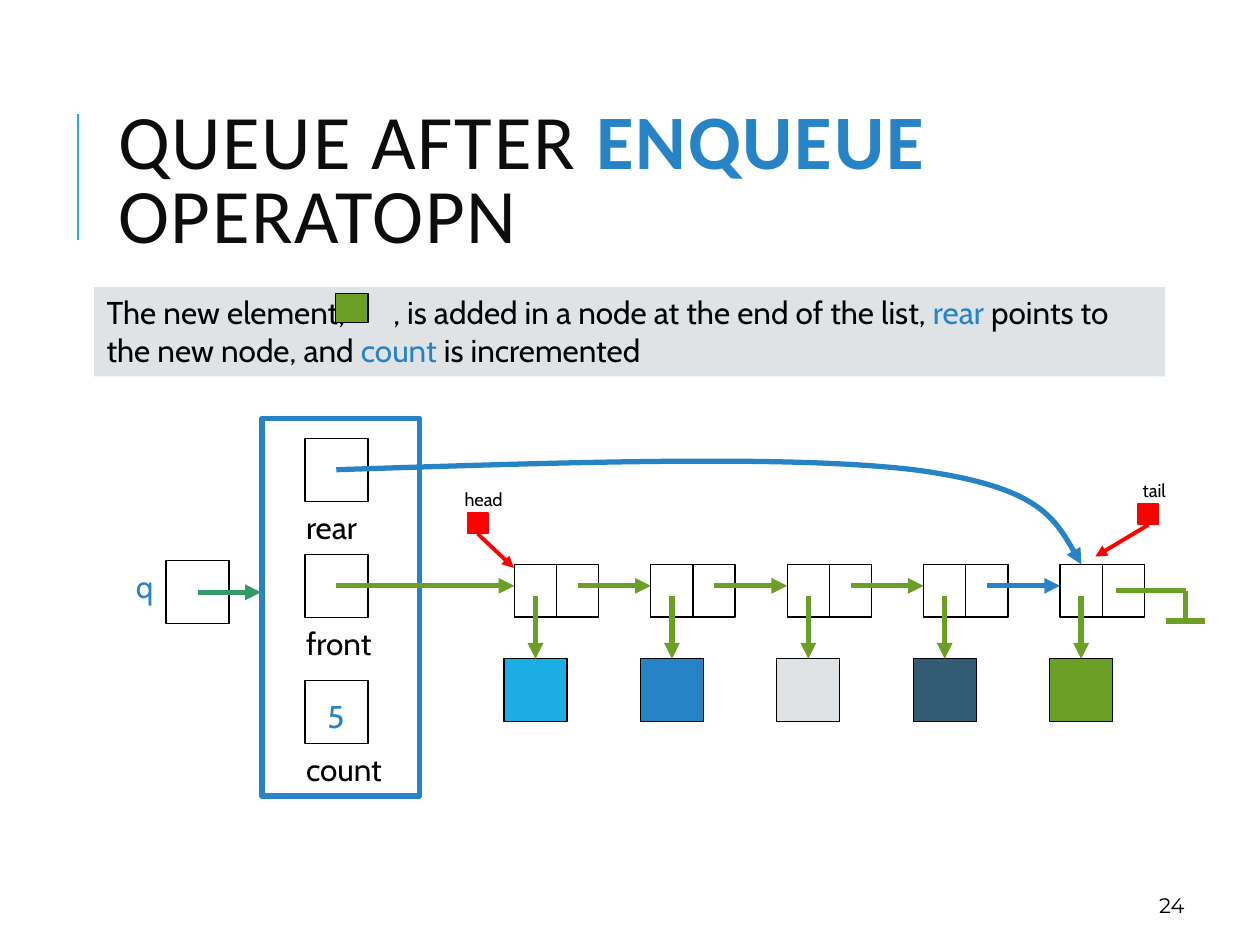
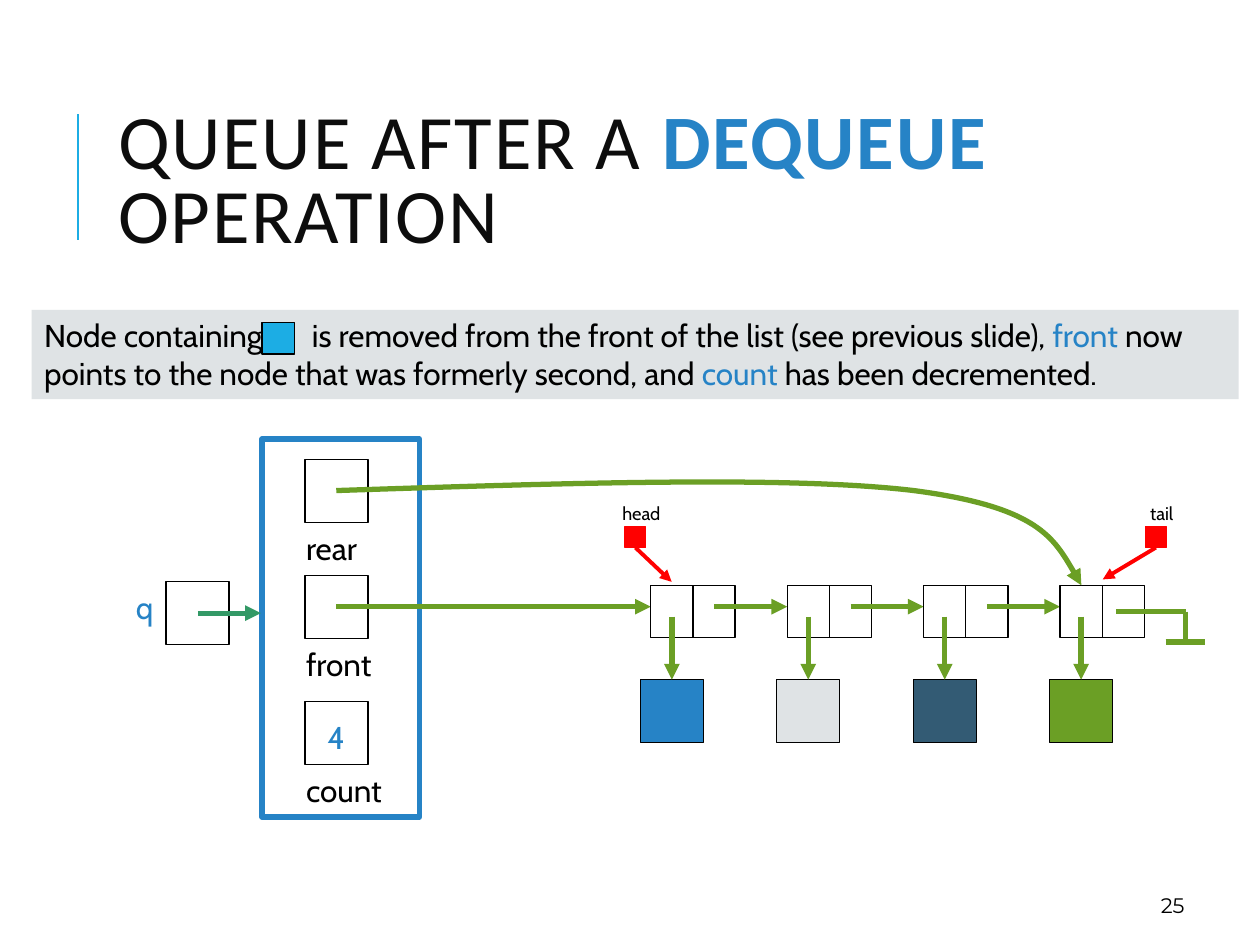
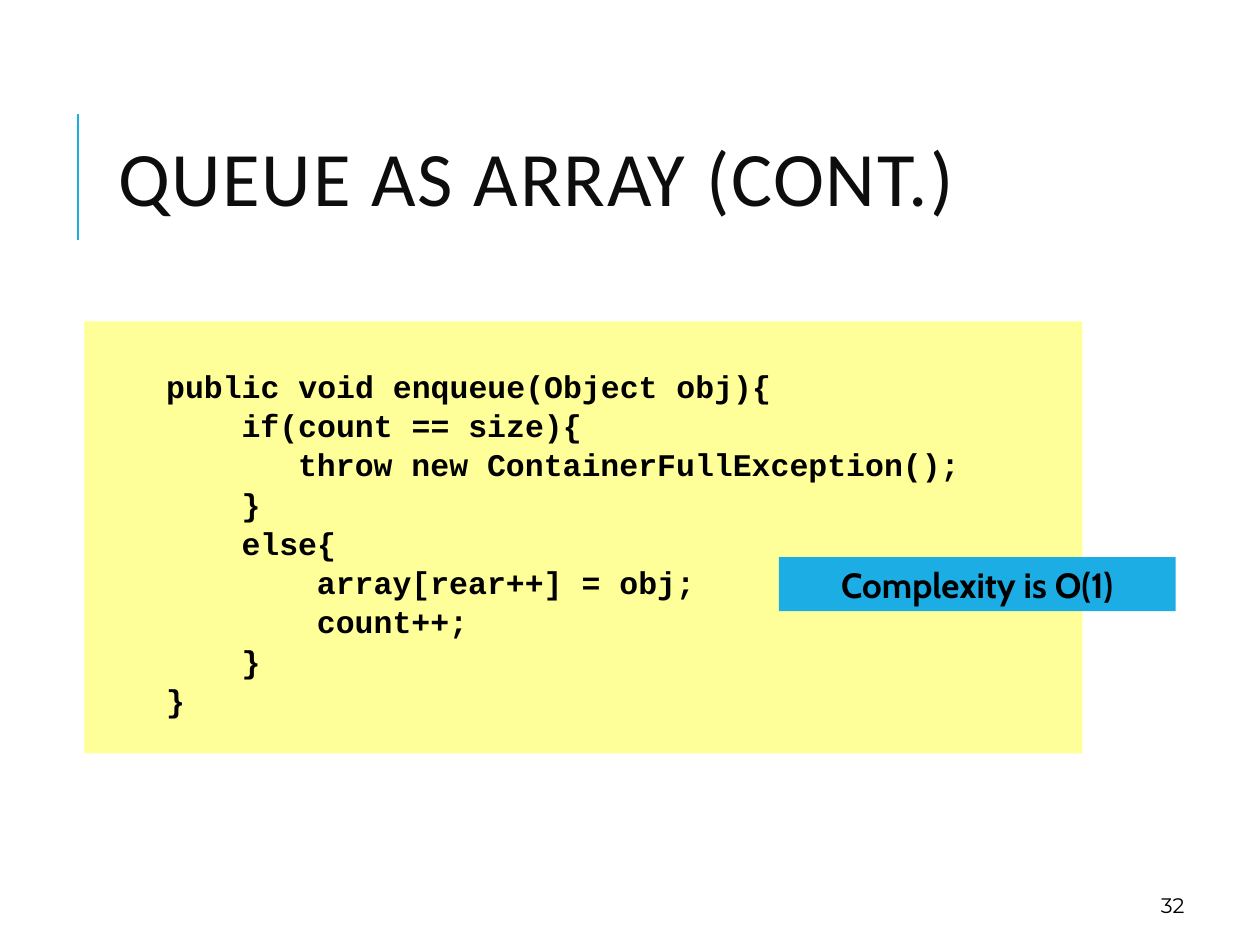
from lxml import etree
from pptx import Presentation
from pptx.dml.color import RGBColor as RGB
from pptx.enum.shapes import MSO_CONNECTOR as CONN, MSO_SHAPE as SHAPE
from pptx.enum.text import MSO_ANCHOR as ANCHOR, PP_ALIGN as ALIGN
from pptx.oxml.ns import qn
from pptx.util import Cm, Pt

C = {"black": "000000", "title": "0D0D0D", "sky": "1CADE4", "blue": "2683C6",
     "grey": "DFE3E5", "slate": "335B74", "green": "6B9F25", "teal": "339966",
     "red": "FF0000", "yellow": "FFFF99"}

prs = Presentation()
prs.slide_width, prs.slide_height = Cm(25.4), Cm(19.05)


def box(s, x, y, w, h, paras=(), fill=None, line=None, width=0.75, font="Cabin",
        size=18, bold=False, color="black", align=ALIGN.LEFT, anchor=ANCHOR.TOP,
        spacing=None, after=0, tracking=None, tab=None, insets=None):
    """Box of paragraphs; each is (indent, runs), each run is (text, own format)."""
    at = Cm(x), Cm(y), Cm(w), Cm(h)
    if fill or line:
        sp = s.shapes.add_shape(SHAPE.RECTANGLE, *at)
        sp.shadow.inherit = False
    else:
        sp = s.shapes.add_textbox(*at)
    if fill:
        sp.fill.solid()
        sp.fill.fore_color.rgb = RGB.from_string(C[fill])
    else:
        sp.fill.background()
    if line:
        sp.line.color.rgb = RGB.from_string(C[line])
        sp.line.width = Pt(width)
    else:
        sp.line.fill.background()
    tf = sp.text_frame
    tf.word_wrap, tf.vertical_anchor = True, anchor
    if insets:
        tf.margin_left, tf.margin_top, tf.margin_right, tf.margin_bottom = map(Cm, insets)
    if isinstance(paras, str):
        paras = [(0, [(paras, {})])]
    for i, (indent, runs) in enumerate(paras):
        p = tf.paragraphs[0] if i == 0 else tf.add_paragraph()
        p.alignment, p.line_spacing, p.space_after = align, spacing, Pt(after)
        pPr = p._p.get_or_add_pPr()
        if indent:
            pPr.set("marL", str(Cm(indent)))
        if tab:
            stops = etree.SubElement(pPr, qn("a:tabLst"))
            etree.SubElement(stops, qn("a:tab"), pos=str(Cm(tab)), algn="l")
        for text, own in runs:
            r = p.add_run()
            r.text = text
            r.font.name, r.font.size = font, Pt(size)
            r.font.bold = own.get("bold", bold)
            r.font.color.rgb = RGB.from_string(C[own.get("color", color)])
            if tracking:
                r._r.get_or_add_rPr().set("spc", str(tracking))


def link(s, *points, color="green", width=3, arrow=True):
    """Straight line through two points, or cubic curves through 3n + 1 points."""
    pts = [(Cm(x), Cm(y)) for x, y in points]
    if len(pts) == 2:
        sp = s.shapes.add_connector(CONN.STRAIGHT, *pts[0], *pts[1])
    else:
        fb = s.shapes.build_freeform(*pts[0])
        fb.add_line_segments(pts[1:], close=False)
        sp = fb.convert_to_shape()
        sp.fill.background()
        segs = list(sp.element.iter(qn("a:lnTo")))
        for i in range(0, len(segs), 3):
            cubic = etree.SubElement(segs[i].getparent(), qn("a:cubicBezTo"))
            for seg in segs[i:i + 3]:
                cubic.append(seg[0])
                seg.getparent().remove(seg)
    sp.line.color.rgb = RGB.from_string(C[color])
    sp.line.width = Pt(width)
    if arrow:
        etree.SubElement(sp.line._get_or_add_ln(), qn("a:tailEnd"), type="triangle")
    etree.SubElement(sp.element.spPr, qn("a:effectLst"))


# Titles, accent bar and page number on every slide
KEY, STRONG = {"color": "blue"}, {"color": "blue", "bold": True}
titles = [
    ([("QUEUE AFTER ", {}), ("ENQUEUE ", STRONG), ("OPERATOPN", {})], "24"),
    ([("QUEUE AFTER A ", {}), ("DEQUEUE", STRONG), (" OPERATION", {})], "25"),
    ([("QUEUE AS ARRAY (CONT.)", {})], "32"),
]
slides = []
for runs, number in titles:
    s = prs.slides.add_slide(prs.slide_layouts[6])
    link(s, (1.57, 4.83), (1.57, 2.29), color="sky", width=1.5, arrow=False)
    box(s, 2.13, 1.63, 20.24, 4.17, [(0, runs)], font="Calibri", size=44,
        color="title", anchor=ANCHOR.MIDDLE, spacing=0.8, tracking=100)
    box(s, 18.21, 17.35, 5.92, 1.27, number, font="Montserrat", size=12,
        align=ALIGN.RIGHT, anchor=ANCHOR.BOTTOM)
    slides.append(s)

# Linked queue before and after: what differs between the two diagrams
elements = ["sky", "blue", "grey", "slate", "green"]
diagrams = [
    dict(dy=0, first=0, new="blue", band=(1.9, 5.79, 21.59, 1.8), tab=5.78,
         chip=(6.76, 5.92, 0.66, 0.58), chip_fill="green",
         head=(9.42, 10.34), tail=(22.94, 10.16),
         note=[("The new element,\t, is added in a node at the end of the list, ", {}),
               ("rear", KEY), (" points to the new node, and ", {}),
               ("count", KEY), (" is incremented", {})]),
    dict(dy=0.42, first=1, new="green", band=(0.64, 6.25, 24.33, 1.8), tab=5.4,
         chip=(5.28, 6.5, 0.66, 0.64), chip_fill="sky",
         head=(12.6, 10.62), tail=(23.09, 10.62),
         note=[("Node containing\tis removed from the front of the list "
                "(see previous slide), ", {}),
               ("front", KEY), (" now points to the node that was formerly second, and ", {}),
               ("count", KEY), (" has been decremented.", {})]),
]
SIDE, CELL_W, CELL_H = 1.27, 0.85, 1.06
NODE_X, PITCH = 10.37, 2.75
curve = [(6.78, 9.47), (11.35, 9.32), (15.9, 9.17), (18.42, 9.47),
         (20.93, 9.8), (21.36, 10.59), (21.8, 11.38)]
ground = [((22.5, 11.91), (23.9, 11.91)), ((23.9, 11.91), (23.9, 12.52)),
          ((23.5, 12.52), (24.3, 12.52))]

for s, d in zip(slides, diagrams):
    dy, first, last = d["dy"], d["first"], len(elements) - 1

    # Explanation with the element it speaks of
    box(s, *d["band"], [(0, d["note"])], fill="grey", tab=d["tab"])
    box(s, *d["chip"], fill=d["chip_fill"], line="black")

    # Queue record and its reference
    box(s, 5.28, 8.43 + dy, 3.18, 7.62, line="blue", width=3)
    for name, y in [("rear", 8.84), ("front", 11.18), ("count", 13.72)]:
        box(s, 6.15, y + dy, SIDE, SIDE, line="black")
        box(s, 5.92, y + SIDE + dy, 2.34, 1.09, name)
    box(s, 6.35, 13.92 + dy, 1, 1.09, str(len(elements) - first), color="blue")
    box(s, 2.49, 11.3 + dy, SIDE, 1.09, "q", color="blue")
    box(s, 3.35, 11.3 + dy, SIDE, SIDE, line="black")
    link(s, (3.99, 11.94 + dy), (5.26, 11.94 + dy), color="teal")

    # Nodes, their elements and the links between them
    next_y = 11.81 + dy
    link(s, (6.78, next_y), (NODE_X + first * PITCH, next_y))
    for i in range(first, last + 1):
        x = NODE_X + i * PITCH
        box(s, x - 0.21, 13.28 + dy, SIDE, SIDE, fill=elements[i], line="black")
        for cell_x in (x, x + CELL_W):
            box(s, cell_x, 11.38 + dy, CELL_W, CELL_H, line="black")
        link(s, (x + CELL_W / 2, 12.01 + dy), (x + CELL_W / 2, 13.28 + dy))
        if i < last:
            link(s, (x + 1.5 * CELL_W, next_y), (x + PITCH, next_y),
                 color=d["new"] if i == last - 1 else "green")
    link(s, *[(x, y + dy) for x, y in curve], color=d["new"])
    for a, b in ground:
        link(s, (a[0], a[1] + dy), (b[0], b[1] + dy), arrow=False)

    # Head and tail markers
    for name, dx, drop in [("head", 0.73, 0.69), ("tail", -1.07, 0.64)]:
        x, y = d[name]
        box(s, x, y, 0.42, 0.42, fill="red", line="red")
        link(s, (x + 0.21, y + 0.42), (x + 0.21 + dx, y + 0.42 + drop),
             color="red", width=2.25)
        box(s, x - 0.61, y - 0.51, 1.88, 0.46, name, size=10.5,
            align=ALIGN.CENTER, anchor=ANCHOR.MIDDLE)

# Array version: code, indented by character columns
CHAR = 0.38
code = [(4, "public void enqueue(Object obj){"), (8, "if(count == size){"),
        (11, "throw new ContainerFullException();"), (8, "}"), (8, "else{"),
        (12, "array[rear++] = obj;"), (12, "count++;"), (8, "}"), (4, "}")]
s = slides[2]
box(s, 1.7, 6.48, 20.12, 8.71, [(n * CHAR, [(text, {})]) for n, text in code],
    fill="yellow", font="Courier New", bold=True, spacing=0.9, after=3,
    insets=(0.13, 1, 0.13, 0.13))
box(s, 15.7, 11.23, 8, 1.09, "Complexity is O(1)", fill="sky", size=20, bold=True,
    align=ALIGN.CENTER)

prs.save("out.pptx")
